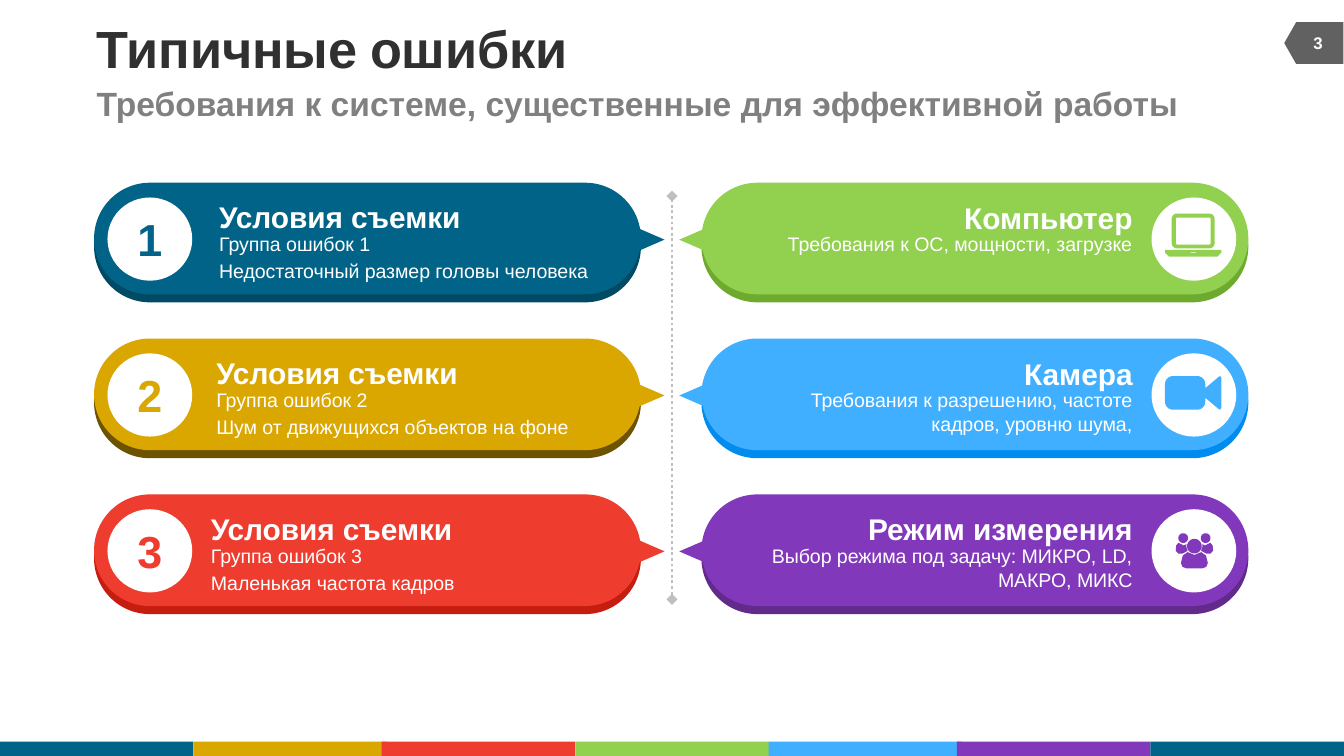
from math import cos, pi, sin

from lxml.etree import SubElement
from pptx import Presentation
from pptx.dml.color import RGBColor
from pptx.enum.dml import MSO_LINE
from pptx.enum.shapes import MSO_CONNECTOR, MSO_SHAPE
from pptx.enum.text import MSO_ANCHOR, MSO_AUTO_SIZE, PP_ALIGN
from pptx.oxml.ns import qn
from pptx.util import Pt

COLORS = {
    "teal": "006387", "teal_dark": "004A65",
    "gold": "DAA600", "gold_dark": "6D5300",
    "red": "EE3C2E", "red_dark": "C51D10",
    "green": "92D050", "green_dark": "6EAA2E",
    "blue": "40AFFF", "blue_dark": "008BEF",
    "plum": "8238BA", "plum_dark": "612A8B",
    "white": "FFFFFF", "ink": "303030", "gray": "808080",
    "tag": "616161", "line": "BFBFBF",
}
STRIP = ["teal", "gold", "red", "green", "blue", "plum", "teal"]
STARTS = [0, 103.7, 204.5, 308.2, 411.8, 512.6, 616.3]
LEFT = [
    ("teal", "1", 67, ["Группа ошибок 1", "Недостаточный размер головы человека"]),
    ("gold", "2", 65.5, ["Группа ошибок 2", "Шум от движущихся объектов на фоне"]),
    ("red", "3", 62.6, ["Группа ошибок 3", "Маленькая частота кадров"]),
]
RIGHT = [
    ("green", "Компьютер", 91.4, "Требования к ОС, мощности, загрузке"),
    ("blue", "Камера", 59, "Требования к разрешению, частоте кадров, уровню шума,"),
    ("plum", "Режим измерения", 143.3, "Выбор режима под задачу: МИКРО, LD, МАКРО, МИКС"),
]


def color(name):
    return RGBColor.from_string(COLORS[name])


def style(font, size, tint, bold):
    font.name, font.size, font.bold = "Arial", Pt(size), bold
    font.color.rgb = color(tint)


def paint(shape, tint):
    shape.shadow.inherit = False
    shape.fill.solid()
    shape.fill.fore_color.rgb = color(tint)
    shape.line.fill.background()
    return shape


def add_form(slide, kind, box, tint, turn=0):
    shape = paint(slide.shapes.add_shape(kind, *map(Pt, box)), tint)
    shape.rotation = turn
    return shape


def set_frame(frame, anchor=MSO_ANCHOR.MIDDLE, wrap=True):
    frame.margin_left = frame.margin_right = 0
    frame.margin_top = frame.margin_bottom = 0
    frame.vertical_anchor, frame.word_wrap = anchor, wrap
    frame.auto_size = MSO_AUTO_SIZE.NONE


def write(frame, text, size, tint, bold=True, align=PP_ALIGN.LEFT, gap=0):
    frame.text = text
    for para in frame.paragraphs:
        para.alignment, para.space_before = align, Pt(gap)
        for run in para.runs:
            style(run.font, size, tint, bold)


def add_text(slide, box, text, size, bold, align, anchor, wrap=True, gap=0):
    frame = slide.shapes.add_textbox(*map(Pt, box)).text_frame
    set_frame(frame, anchor, wrap)
    write(frame, text, size, "white", bold, align, gap)


def place(shape, box):
    shape.left, shape.top, shape.width, shape.height = map(Pt, box)
    set_frame(shape.text_frame)


def round_box(x, y, w, h, r, steps=8):
    ends = [(x + w - r, y + h - r), (x + r, y + h - r), (x + r, y + r), (x + w - r, y + r)]
    return [
        (cx + r * cos(a), cy + r * sin(a))
        for i, (cx, cy) in enumerate(ends)
        for a in [(i + k / steps) * pi / 2 for k in range(steps + 1)]
    ]


def disc(x, y, r):
    return round_box(x - r, y - r, 2 * r, 2 * r, r)


def laptop():
    base = [(7.2, 28.1), (37.4, 28.1), (37.4, 29.5), (35.3, 31.7), (9.4, 31.7), (7.2, 29.5)]
    return [
        round_box(10.8, 8.6, 23, 18.7, 2.9),
        round_box(13, 10.8, 18.7, 14.4, 0.7),
        base,
        round_box(20.9, 29.3, 2.9, 0.4, 0.1),
    ]


def camera():
    lens = [(28.8, 18.7), (36, 12.6), (36.7, 12.2), (37.4, 13),
            (37.4, 29.2), (36.7, 30.2), (36, 29.9), (28.8, 23.8)]
    return [round_box(7.2, 12.2, 21.6, 18, 4.3), lens]


def people():
    side = [(14.4, 18), (17.3, 19.4), (18.7, 18.7), (18.7, 20.2), (19.4, 22.3),
            (16.6, 23.8), (14.4, 23.8), (13, 22.3), (13.2, 19.5)]
    half = [(23, 24.5), (19.4, 23), (16.8, 24.8), (15.8, 28.8), (16.6, 30.9), (18.7, 31.7)]
    flip = [(46 - x, y) for x, y in half[:0:-1]]
    return [
        disc(23, 19.8, 3.9), disc(17, 15.5, 2.6), disc(29, 15.5, 2.6),
        half + flip, side, [(46 - x, y) for x, y in side],
    ]


def add_icon(slide, box, loops, tint):
    x, y = box[:2]
    paths = [[(Pt(x + a), Pt(y + b)) for a, b in loop] for loop in loops]
    pen = slide.shapes.build_freeform(*paths[0][0], scale=1.0)
    for i, path in enumerate(paths):
        if i:
            pen.move_to(*path[0])
        pen.add_line_segments(path[1:], close=True)
    paint(pen.convert_to_shape(), tint)


def add_pill(slide, box, tint, right):
    """Draw a pill with its rim, pointer and disc; return the disc and its box."""
    x, y, w, h = box
    for drop, shade in ((4.3, tint + "_dark"), (0, tint)):
        pill = add_form(slide, MSO_SHAPE.ROUNDED_RECTANGLE, (x, y + drop, w, h), shade)
        pill.adjustments[0] = 0.5
    tip = x - 10.8 if right else x + w - 2.9
    add_form(slide, MSO_SHAPE.ISOSCELES_TRIANGLE, (tip, y + 22.2, 14.4, 16.6), tint,
             270 if right else 90)
    spot = (x + w - 51.9 if right else x + 7.2, y + 7.9, 45.4, 44.6)
    return add_form(slide, MSO_SHAPE.OVAL, spot, "white"), spot


def add_error(slide, box, tint, mark, inset, lines):
    x, y = box[:2]
    ring, _ = add_pill(slide, box, tint, False)
    set_frame(ring.text_frame)
    write(ring.text_frame, mark, 24, tint, align=PP_ALIGN.CENTER)
    add_text(slide, (x + inset, y + 8.5, 131, 19.4), "Условия съемки", 16, True,
             PP_ALIGN.LEFT, MSO_ANCHOR.MIDDLE, False)
    add_text(slide, (x + inset, y + 26.4, 206.6, 28), "\n".join(lines), 10.5, False,
             PP_ALIGN.LEFT, MSO_ANCHOR.TOP, gap=2.1)


def add_need(slide, box, tint, head, width, text, icon):
    x, y = box[:2]
    _, spot = add_pill(slide, box, tint, True)
    add_icon(slide, spot, icon(), tint)
    edge = x + 231
    add_text(slide, (edge - width, y + 8.8, width, 19.4), head, 16, True,
             PP_ALIGN.RIGHT, MSO_ANCHOR.MIDDLE, False)
    add_text(slide, (edge - 206.6, y + 26.6, 206.6, 25.2), text, 10.5, False,
             PP_ALIGN.RIGHT, MSO_ANCHOR.TOP, gap=2.1)


def add_heads(slide, box):
    x, y, w, h = box
    title, body = slide.placeholders
    place(title, (x, y, 444, 28))
    para = title.text_frame.paragraphs[0]
    para.alignment = PP_ALIGN.LEFT
    for text, size in (("Типичные", 28), (" ", 24), ("ошибки", 28)):
        run = para.add_run()
        run.text = text
        style(run.font, size, "ink", True)
    place(body, (x, y + 28, w, h - 28))
    write(body.text_frame, "Требования к системе, существенные для эффективной работы",
          18, "gray", gap=3.6)
    props = body.text_frame.paragraphs[0]._p.get_or_add_pPr()
    props.set("marL", "0")
    props.set("indent", "0")
    SubElement(props, qn("a:buNone"))


def add_tag(slide, box):
    x, y, w, h = box
    add_form(slide, MSO_SHAPE.FLOWCHART_OFFPAGE_CONNECTOR,
             (x + (w - h) / 2, y - (w - h) / 2, h, w), "tag", 90)
    add_text(slide, (x + 3, y, w - 1.4, h), "3", 9, True, PP_ALIGN.CENTER, MSO_ANCHOR.MIDDLE)


def add_strip(slide, box):
    y, h = box[1], box[3]
    for start, tint in zip(STARTS, STRIP):
        add_form(slide, MSO_SHAPE.RECTANGLE, (start, y, 103.7, h), tint)


def add_axis(slide, box):
    x, y, _, h = box
    axis = slide.shapes.add_connector(MSO_CONNECTOR.STRAIGHT, Pt(x), Pt(y + h), Pt(x), Pt(y))
    axis.line.width, axis.line.dash_style = Pt(1.5), MSO_LINE.ROUND_DOT
    axis.line.color.rgb = color("line")
    for end in ("a:headEnd", "a:tailEnd"):
        SubElement(axis.line._get_or_add_ln(), qn(end)).set("type", "diamond")
    SubElement(axis._element.spPr, qn("a:effectLst"))


def main():
    deck = Presentation()
    deck.slide_width, deck.slide_height = Pt(720), Pt(405)
    slide = deck.slides.add_slide(deck.slide_layouts[1])
    add_strip(slide, (0, 397.4, 720, 7.6))
    add_heads(slide, (51.8, 11.5, 588.2, 59.8))
    add_tag(slide, (688, 11.9, 31.7, 22.3))
    add_axis(slide, (360, 105.1, 0, 216))
    for i, (left, right, icon) in enumerate(zip(LEFT, RIGHT, (laptop, camera, people))):
        y = 97.9 + i * 83.5
        add_error(slide, (50.4, y, 293, 59.8), *left)
        add_need(slide, (375.8, y, 293, 59.8), *right, icon)
    deck.save("out.pptx")


if __name__ == "__main__":
    main()
